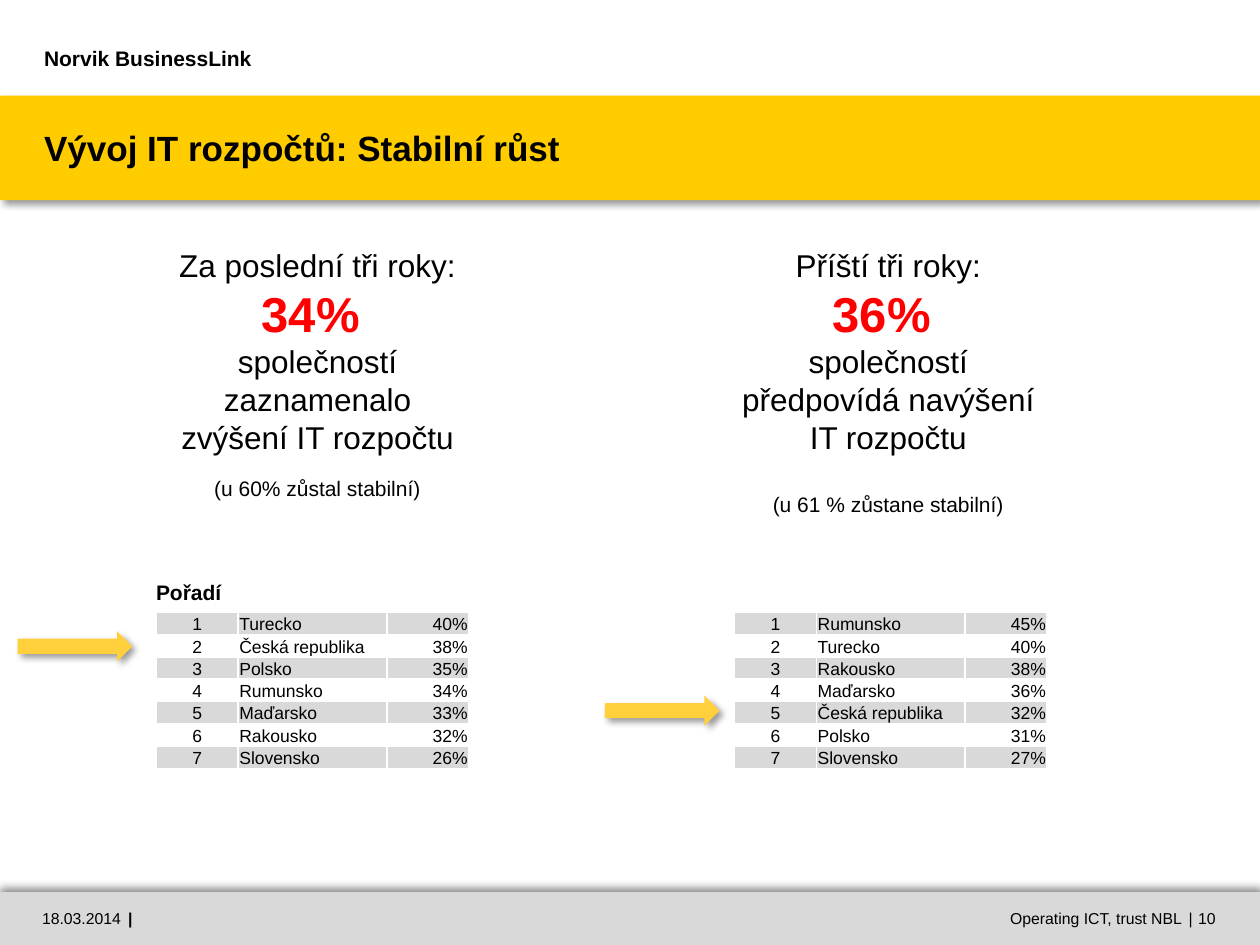
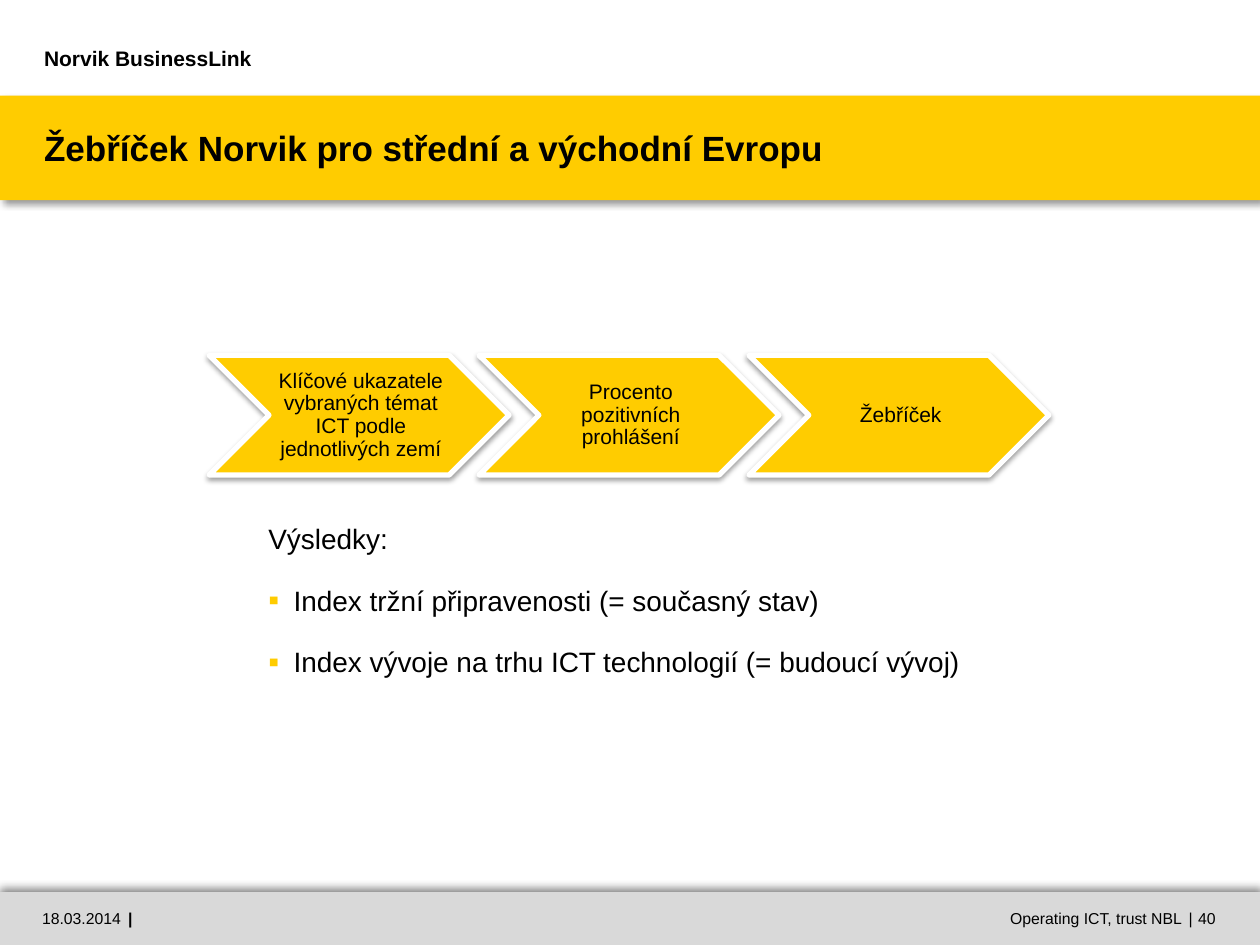
import pptx
import pptx.dml.color
import pptx.enum.shapes
import pptx.enum.text
import pptx.oxml
import pptx.oxml.ns
import pptx.util
from pptx.util import Inches

ALIGN = pptx.enum.text.PP_ALIGN
ANCHOR = pptx.enum.text.MSO_ANCHOR
SHAPE = pptx.enum.shapes.MSO_SHAPE

FONT = "Arial"
COLORS = {
    "text": "000000",
    "band": "FFCC00",
    "arrow": "FFD03C",
    "grey": "D9D9D9",
    "white": "FFFFFF",
    "highlight": "FF0000",
}

# Shadows: opacity %, blur pt, distance pt, direction in degrees
SHADOWS = {
    "band": (40, 4, 3, 45),
    "footer": (50, 5, 2, 270),
    "chevron": (38, 3.1, 1.6, 90),
}

# Shared content: (text, box, format); the page number is added per slide
FOOTER_TOP, FOOTER_HEIGHT = 7.08, 0.42
TITLE_TOP, TITLE_HEIGHT = 0.76, 0.83
COMPANY = "Norvik BusinessLink"
FOOTER_PARTS = [
    ("18.03.2014", 0.06, 0.9, {"align": ALIGN.RIGHT}),
    ("|", 0.97, 0.13, {"align": ALIGN.CENTER, "bold": True}),
    ("Operating ICT, trust NBL", 5.75, 3.63, {"align": ALIGN.RIGHT}),
    ("|", 9.38, 0.14, {"align": ALIGN.CENTER}),
]
PAGE_LEFT, PAGE_WIDTH = 9.51, 0.49

# Budget slide content
BUDGET_TITLE = "Vývoj IT rozpočtů: Stabilní růst"
RANKING_LABEL = "Pořadí"
PERIODS = [
    {
        "heading": "Za poslední tři roky:",
        "share": "34% ",
        "statement": "společností zaznamenalo zvýšení IT rozpočtu",
        "note": "(u 60% zůstal stabilní)",
        "note_gap": 11.5,
        "summary_box": (1.26, 1.9, 2.52, 2.15),
        "table_left": 1.24,
        "arrow_at": (0.14, 5.01),
        "ranking": [
            ("Turecko", "40%"), ("Česká republika", "38%"),
            ("Polsko", "35%"), ("Rumunsko", "34%"), ("Maďarsko", "33%"),
            ("Rakousko", "32%"), ("Slovensko", "26%"),
        ],
    },
    {
        "heading": "Příští tři roky:",
        "share": "36% ",
        "statement": "společností předpovídá navýšení IT rozpočtu",
        "note": "(u 61 % zůstane stabilní)",
        "note_gap": 20.7,
        "summary_box": (5.79, 1.9, 2.52, 2.29),
        "table_left": 5.83,
        "arrow_at": (4.8, 5.52),
        "ranking": [
            ("Rumunsko", "45%"), ("Turecko", "40%"), ("Rakousko", "38%"),
            ("Maďarsko", "36%"), ("Česká republika", "32%"),
            ("Polsko", "31%"), ("Slovensko", "27%"),
        ],
    },
]
TABLE_TOP, TABLE_HEIGHT = 4.86, 1.24
COLUMN_WIDTHS = (0.65, 1.18, 0.65)
COLUMN_ALIGNS = (ALIGN.CENTER, ALIGN.LEFT, ALIGN.RIGHT)

# Index slide content
INDEX_TITLE = "Žebříček Norvik pro střední a východní Evropu"
STEPS = [
    "Klíčové ukazatele vybraných témat ICT podle jednotlivých zemí",
    "Procento pozitivních prohlášení",
    "Žebříček",
]
STEP_LEFT, STEP_TOP, STEP_WIDTH, STEP_HEIGHT = 1.66, 2.82, 2.38, 0.95
STEP_PITCH = 0.9 * STEP_WIDTH
RESULTS_HEADING = "Výsledky:"
RESULTS = [
    "Index tržní připravenosti (= současný stav)",
    "Index vývoje na trhu ICT technologií (= budoucí vývoj)",
]


def rgb(name):
    return pptx.dml.color.RGBColor.from_string(COLORS[name])


def write(frame, paragraphs, *, insets=(0, 0, 0, 0), anchor=ANCHOR.MIDDLE, **shared):
    """Fill a text frame with strings or (string, own format) pairs."""
    frame.word_wrap = True
    frame.auto_size = pptx.enum.text.MSO_AUTO_SIZE.NONE
    frame.vertical_anchor = anchor
    (frame.margin_left, frame.margin_top,
     frame.margin_right, frame.margin_bottom) = map(Inches, insets)
    for index, entry in enumerate(paragraphs):
        text, own = (entry, {}) if isinstance(entry, str) else entry
        style = {**shared, **own}
        paragraph = frame.paragraphs[0] if index == 0 else frame.add_paragraph()
        format_paragraph(paragraph, text, **style)


def format_paragraph(paragraph, text, *, size=12, bold=False, color="text",
                     align=ALIGN.LEFT, before=0, after=0, spacing=1.0, bullet=None):
    if bullet is not None:
        set_bullet(paragraph, bullet)
    paragraph.alignment = align
    paragraph.line_spacing = spacing
    paragraph.space_before = pptx.util.Pt(before)
    paragraph.space_after = pptx.util.Pt(after)
    run = paragraph.add_run()
    run.text = text
    run.font.name = FONT
    run.font.size = pptx.util.Pt(size)
    run.font.bold = bold
    run.font.color.rgb = rgb(color)


def add_xml(parent, xml):
    namespace = pptx.oxml.ns.nsdecls("a")
    parent.append(pptx.oxml.parse_xml(xml.replace("/>", f" {namespace}/>", 1)
                                      if xml.count("<") == 1
                                      else xml.replace(">", f" {namespace}>", 1)))


def set_bullet(paragraph, character):
    """An empty character switches the bullet and the indent off."""
    properties = paragraph._p.get_or_add_pPr()
    indent = Inches(0.2) if character else 0
    properties.set("marL", str(indent))
    properties.set("indent", str(-indent))
    if not character:
        add_xml(properties, "<a:buNone/>")
        return
    add_xml(properties, f'<a:buClr><a:srgbClr val="{COLORS["band"]}"/></a:buClr>')
    add_xml(properties, '<a:buSzPct val="110000"/>')
    add_xml(properties, f'<a:buFont typeface="{FONT}"/>')
    add_xml(properties, f'<a:buChar char="{character}"/>')


def add_text(slide, box, paragraphs, **style):
    text_box = slide.shapes.add_textbox(*map(Inches, box))
    write(text_box.text_frame, paragraphs, **style)


def add_filled(slide, kind, box, fill, shadow):
    shape = slide.shapes.add_shape(kind, *map(Inches, box))
    shape.fill.solid()
    shape.fill.fore_color.rgb = rgb(fill)
    shape.line.fill.background()
    shape.shadow.inherit = False
    opacity, blur, distance, direction = SHADOWS[shadow]
    effects = shape._element.spPr.find(pptx.oxml.ns.qn("a:effectLst"))
    add_xml(effects, f'<a:outerShdw blurRad="{pptx.util.Pt(blur)}" '
                     f'dist="{pptx.util.Pt(distance)}" dir="{direction * 60000}" '
                     'rotWithShape="0"><a:srgbClr val="000000">'
                     f'<a:alpha val="{opacity * 1000}"/></a:srgbClr></a:outerShdw>')
    return shape


def place(placeholder, box):
    (placeholder.left, placeholder.top,
     placeholder.width, placeholder.height) = map(Inches, box)


def add_slide(presentation, layout_index, title, page):
    """Start a slide with its bands, title, company name and footer."""
    slide = presentation.slides.add_slide(presentation.slide_layouts[layout_index])
    bands = [
        (TITLE_TOP, TITLE_HEIGHT, "band", "band"),
        (FOOTER_TOP, FOOTER_HEIGHT, "grey", "footer"),
    ]
    for top, height, fill, shadow in bands:
        band = add_filled(slide, SHAPE.RECTANGLE, (0, top, 10, height), fill, shadow)
        slide.shapes._spTree.insert(2, band._element)  # behind the title

    place(slide.shapes.title, (0.35, TITLE_TOP, 9.31, TITLE_HEIGHT))
    write(slide.shapes.title.text_frame, [title], insets=(0, 0.05, 0, 0),
          size=20, bold=True, spacing=pptx.util.Pt(20))
    add_text(slide, (0.35, 0.16, 5.94, 0.6), [COMPANY], bold=True)
    for text, left, width, style in FOOTER_PARTS + [(page, PAGE_LEFT, PAGE_WIDTH, {})]:
        add_text(slide, (left, FOOTER_TOP, width, FOOTER_HEIGHT), [text], size=9, **style)
    return slide


def add_ranking(slide, left, ranking):
    frame = slide.shapes.add_table(
        len(ranking), len(COLUMN_WIDTHS), Inches(left), Inches(TABLE_TOP),
        Inches(sum(COLUMN_WIDTHS)), Inches(TABLE_HEIGHT))
    table = frame.table
    table.first_row = table.horz_banding = False
    for column, width in zip(table.columns, COLUMN_WIDTHS):
        column.width = Inches(width)
    for row, (country, share) in enumerate(ranking):
        for column, text in enumerate((str(row + 1), country, share)):
            cell = table.cell(row, column)
            cell.fill.solid()
            cell.fill.fore_color.rgb = rgb("white" if row % 2 else "grey")
            cell.vertical_anchor = ANCHOR.BOTTOM
            cell.margin_left = cell.margin_right = cell.margin_top = Inches(0.01)
            cell.margin_bottom = 0
            format_paragraph(cell.text_frame.paragraphs[0], text, size=10,
                             align=COLUMN_ALIGNS[column])


def build_budget_slide(presentation):
    slide = add_slide(presentation, 5, BUDGET_TITLE, "10")
    box_style = {"insets": (0.1, 0.05, 0.1, 0.05), "anchor": ANCHOR.TOP}
    for period in PERIODS:
        summary = [
            period["heading"],
            (period["share"], {"size": 28, "bold": True, "color": "highlight"}),
            period["statement"],
            (period["note"], {"size": 12, "before": period["note_gap"]}),
        ]
        add_text(slide, period["summary_box"], summary, size=18,
                 align=ALIGN.CENTER, **box_style)
        add_ranking(slide, period["table_left"], period["ranking"])
        add_filled(slide, SHAPE.RIGHT_ARROW, (*period["arrow_at"], 0.91, 0.24),
                   "arrow", "band")
    add_text(slide, (1.14, 4.55, 3.5, 0.3), [RANKING_LABEL], bold=True, **box_style)


def build_index_slide(presentation):
    slide = add_slide(presentation, 1, INDEX_TITLE, "40")
    # Process chevrons
    for index, step in enumerate(STEPS):
        box = (STEP_LEFT + index * STEP_PITCH, STEP_TOP, STEP_WIDTH, STEP_HEIGHT)
        chevron = add_filled(slide, SHAPE.CHEVRON, box, "band", "chevron")
        chevron.line.color.rgb = rgb("white")
        chevron.line.width = pptx.util.Pt(3)
        write(chevron.text_frame, [step], insets=(0.05, 0.02, 0.02, 0.02),
              align=ALIGN.CENTER, spacing=0.9)
    # Results list
    body = slide.placeholders[1]
    place(body, (2.13, 4.14, 5.83, 2.68))
    results = [(RESULTS_HEADING, {"bullet": ""}), *RESULTS]
    write(body.text_frame, results, anchor=ANCHOR.TOP, size=16, after=16, bullet="▪")


def main():
    presentation = pptx.Presentation()
    presentation.slide_width = Inches(10)
    presentation.slide_height = Inches(7.5)
    build_budget_slide(presentation)
    build_index_slide(presentation)
    presentation.save("out.pptx")


if __name__ == "__main__":
    main()
